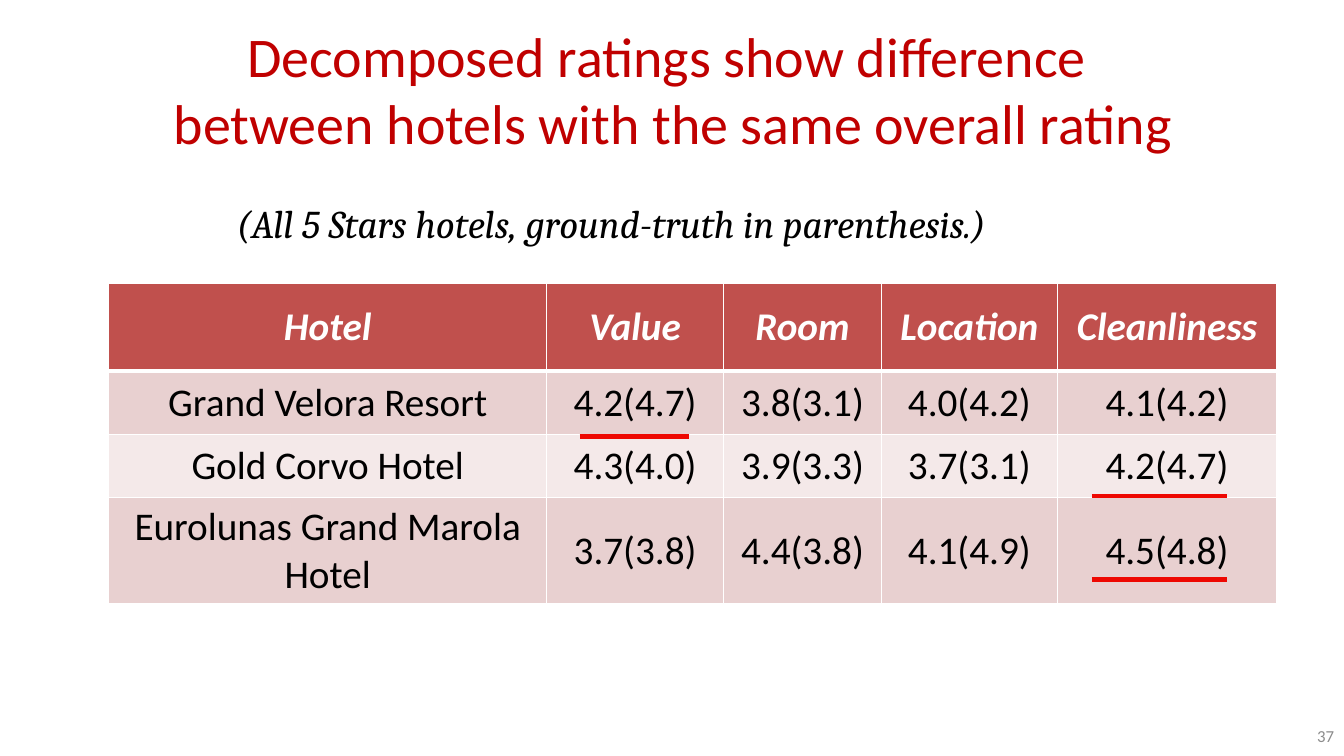
from lxml import etree
from pptx import Presentation
from pptx.dml.color import RGBColor
from pptx.enum import shapes, text
from pptx.oxml import ns
from pptx.util import Inches, Pt

COLORS = {
    "title": "C00000", "ink": "000000", "white": "FFFFFF", "number": "8C8C8C",
    "header": "C0504D", "odd": "E8D0D0", "even": "F4E9E9", "underline": "EE0802",
}
RATINGS = [
    ["Hotel", "Value", "Room", "Location", "Cleanliness"],
    ["Grand Velora Resort", "4.2(4.7)", "3.8(3.1)", "4.0(4.2)", "4.1(4.2)"],
    ["Gold Corvo Hotel", "4.3(4.0)", "3.9(3.3)", "3.7(3.1)", "4.2(4.7)"],
    ["Eurolunas Grand Marola Hotel", "3.7(3.8)", "4.4(3.8)", "4.1(4.9)", "4.5(4.8)"],
]
COLUMN_WIDTHS = [4.34, 1.76, 1.56, 1.75, 2.17]
ROW_HEIGHTS = [0.87, 0.63, 0.63, 1.03]
UNDERLINES = [(10.83, 12.17, 5.75), (5.75, 6.83, 4.33), (10.83, 12.17, 4.92)]


def write(frame, words, size, color, font="Calibri", align=text.PP_ALIGN.CENTER,
          bold=False, italic=False):
    """Fill a text frame with one paragraph and format its runs."""
    frame.text = words
    paragraph = frame.paragraphs[0]
    paragraph.alignment = align
    for run in paragraph.runs:
        run.font.name, run.font.size = font, Pt(size)
        run.font.bold, run.font.italic = bold, italic
        run.font.color.rgb = RGBColor.from_string(COLORS[color])


def add_borders(cell, bottom_width):
    properties = cell._tc.get_or_add_tcPr()
    for side, width in zip("LRTB", (1, 1, 1, bottom_width)):
        border = etree.SubElement(properties, ns.qn(f"a:ln{side}"), w=str(Pt(width)))
        fill = etree.SubElement(border, ns.qn("a:solidFill"))
        etree.SubElement(fill, ns.qn("a:srgbClr"), val=COLORS["white"])


deck = Presentation()
deck.slide_width, deck.slide_height = Inches(13.33), Inches(7.5)
slide = deck.slides.add_slide(deck.slide_layouts[5])

title = slide.shapes.title
title.left, title.top = Inches(0.01), Inches(0.34)
title.width, title.height = Inches(13.33), Inches(1.08)
title.text_frame.vertical_anchor = text.MSO_ANCHOR.MIDDLE
title.text_frame.auto_size = text.MSO_AUTO_SIZE.NONE
write(title.text_frame, "Decomposed ratings show difference \v"
      "between hotels with the same overall rating", 40, "title")

# Ratings table
ratings = slide.shapes.add_table(
    len(RATINGS), len(COLUMN_WIDTHS), Inches(1.08), Inches(2.81),
    Inches(sum(COLUMN_WIDTHS)), Inches(sum(ROW_HEIGHTS))).table
for column, width in zip(ratings.columns, COLUMN_WIDTHS):
    column.width = Inches(width)
for r, (row, height) in enumerate(zip(RATINGS, ROW_HEIGHTS)):
    ratings.rows[r].height = Inches(height)
    is_header = r == 0
    row_color = "header" if is_header else "odd" if r % 2 else "even"
    for c, words in enumerate(row):
        cell = ratings.cell(r, c)
        cell.vertical_anchor = text.MSO_ANCHOR.MIDDLE
        add_borders(cell, 3 if is_header else 1)
        cell.fill.solid()
        cell.fill.fore_color.rgb = RGBColor.from_string(COLORS[row_color])
        write(cell.text_frame, words, 28, "white" if is_header else "ink",
              bold=is_header, italic=is_header)

caption = slide.shapes.add_textbox(
    Inches(2.25), Inches(1.93), Inches(9.17), Inches(0.57)).text_frame
caption.word_wrap = True
write(caption, "(All 5 Stars hotels, ground-truth in parenthesis.)", 28, "ink",
      font="Cambria", align=text.PP_ALIGN.LEFT, italic=True)

# Red underlines for the highlighted ratings
for start, end, y in UNDERLINES:
    underline = slide.shapes.add_connector(
        shapes.MSO_CONNECTOR.STRAIGHT, Inches(start), Inches(y), Inches(end), Inches(y))
    underline.line.color.rgb = RGBColor.from_string(COLORS["underline"])
    underline.line.width = Pt(3)
    etree.SubElement(underline._element.spPr, ns.qn("a:effectLst"))

page_number = slide.shapes.add_textbox(
    Inches(10.22), Inches(7.1), Inches(3.11), Inches(0.4)).text_frame
page_number.word_wrap = True
page_number.vertical_anchor = text.MSO_ANCHOR.MIDDLE
write(page_number, "37", 12, "number", align=text.PP_ALIGN.RIGHT)

deck.save("out.pptx")
